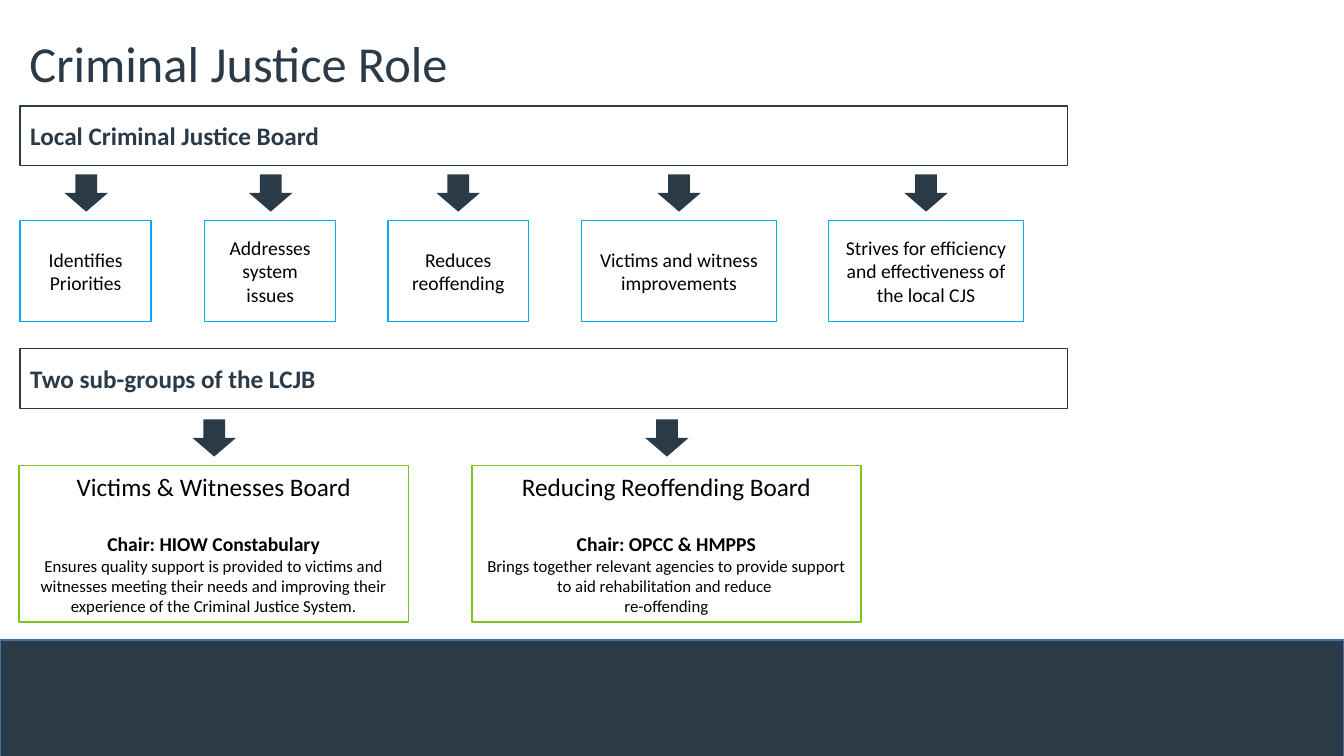
"""Build the Criminal Justice Role slide."""
from pptx import Presentation
from pptx.dml.color import RGBColor
from pptx.enum.shapes import MSO_SHAPE
from pptx.enum.text import MSO_ANCHOR, PP_ALIGN
from pptx.util import Emu, Pt

EMU_PER_PX = 9144
FONT = "Calibri"
COLOURS = {
    "navy": "2A3A47",
    "edge": "43739E",
    "blue": "00AEEF",
    "green": "7CC420",
    "white": "FFFFFF",
    "black": "000000",
}
ROLES = [
    (20, 130, "Identifies Priorities"),
    (203, 130, "Addresses system\vissues"),
    (385, 139, "Reduces reoffending"),
    (577, 193, "Victims and witness improvements"),
    (822, 193, "Strives for efficiency and effectiveness of the local CJS"),
]
BOARDS = [
    (19, "Victims & Witnesses Board", "Chair: HIOW Constabulary",
     "Ensures quality support is provided to victims and witnesses meeting "
     "their needs and improving their experience of the Criminal Justice System."),
    (468, "Reducing Reoffending Board", "Chair: OPCC & HMPPS",
     "Brings together relevant agencies to provide support to aid "
     "rehabilitation and reduce \vre-offending"),
]
BOARD_WIDTH = 386


def px(length):
    return Emu(length * EMU_PER_PX)


def colour(name):
    return RGBColor.from_string(COLOURS[name])


def add_box(page, left, top, width, height, fill=None, line=None,
            kind=MSO_SHAPE.RECTANGLE):
    box = page.shapes.add_shape(kind, px(left), px(top), px(width), px(height))
    box.shadow.inherit = False
    if fill:
        box.fill.solid()
        box.fill.fore_color.rgb = colour(fill)
    else:
        box.fill.background()
    if line:
        box.line.color.rgb = colour(line)
        box.line.width = Pt(1)
    else:
        box.line.fill.background()
    return box


def write(box, paragraphs, ink, align):
    frame = box.text_frame
    frame.word_wrap = True
    frame.vertical_anchor = MSO_ANCHOR.MIDDLE
    for index, (text, size, bold) in enumerate(paragraphs):
        para = frame.paragraphs[0] if index == 0 else frame.add_paragraph()
        para.text = text
        para.alignment = align
        for span in para.runs:
            span.font.name = FONT
            span.font.size = Pt(size)
            span.font.bold = bold
            span.font.color.rgb = colour(ink)


def add_title(page, text):
    title = page.shapes.title
    title.left, title.top, title.width, title.height = map(px, (19, 4, 1131, 124))
    write(title, [(text, 36, False)], "navy", PP_ALIGN.LEFT)
    title.text_frame.paragraphs[0].line_spacing = 0.9


def add_banner(page, top, text):
    banner = add_box(page, 20, top, 1039, 59, line="navy")
    write(banner, [(text, 18, True)], "navy", PP_ALIGN.LEFT)


def add_arrow(page, centre, top):
    add_box(page, centre - 21, top, 43, 37, "navy", kind=MSO_SHAPE.DOWN_ARROW)


def add_role(page, left, width, text):
    add_arrow(page, left + width // 2, 173)
    role = add_box(page, left, 219, width, 100, "white", "blue")
    write(role, [(text, 14, False)], "black", PP_ALIGN.CENTER)


def add_board(page, left, name, chair, purpose):
    add_arrow(page, left + BOARD_WIDTH // 2, 416)
    board = add_box(page, left, 462, BOARD_WIDTH, 155, "white", "green")
    lines = [(name, 18, False), (chair, 14, True), (purpose, 12, False)]
    write(board, lines, "black", PP_ALIGN.CENTER)
    board.text_frame.paragraphs[0].space_after = Pt(22)


def main():
    deck = Presentation()
    deck.slide_width, deck.slide_height = px(1333), px(750)
    page = deck.slides.add_slide(deck.slide_layouts[5])
    add_box(page, 0, 635, 1333, 125, "navy", "edge")
    add_title(page, "Criminal Justice Role")
    add_banner(page, 105, "Local Criminal Justice Board")
    for role in ROLES:
        add_role(page, *role)
    add_banner(page, 346, "Two sub-groups of the LCJB")
    for board in BOARDS:
        add_board(page, *board)
    deck.save("out.pptx")


if __name__ == "__main__":
    main()
